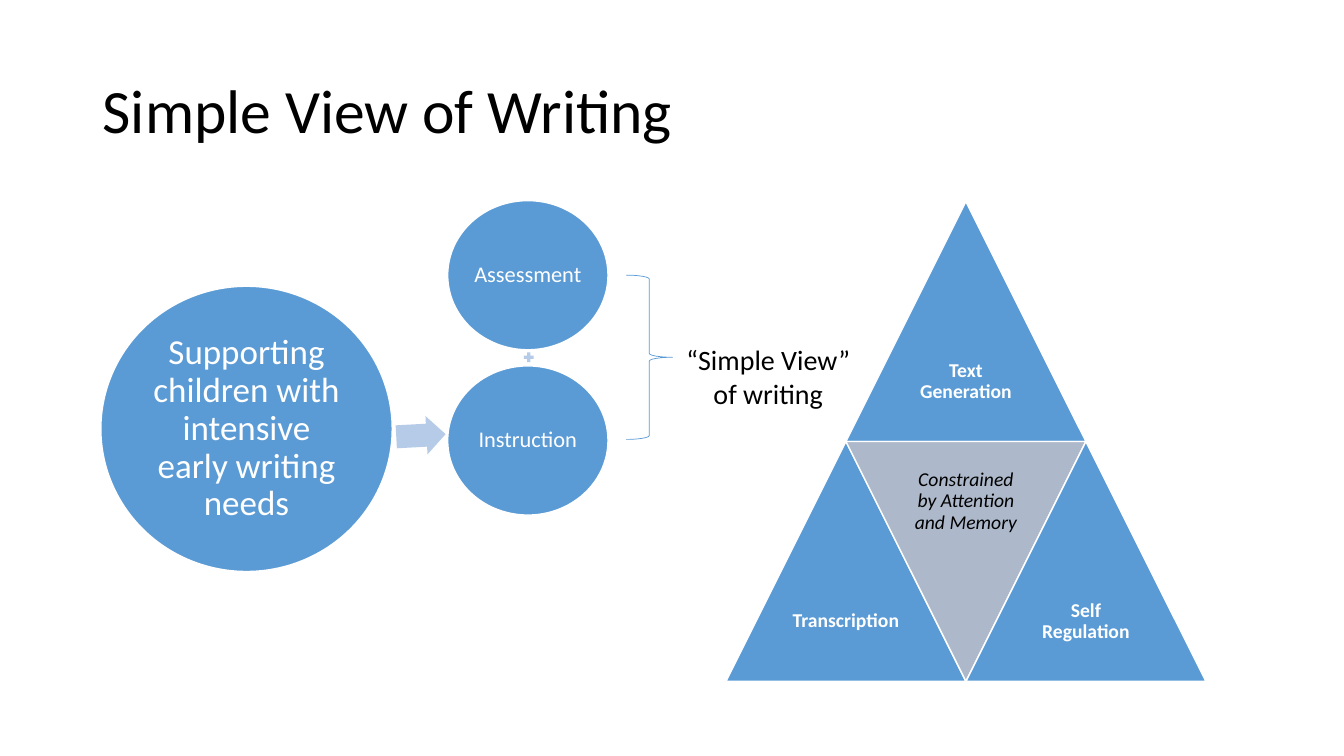
import pptx
import pptx.util
import pptx.dml.color
import pptx.enum.shapes
import pptx.enum.text

Inches = pptx.util.Inches
Pt = pptx.util.Pt
Shape = pptx.enum.shapes.MSO_SHAPE
Align = pptx.enum.text.PP_ALIGN

COLORS = {
    "blue": "5B9BD5",
    "pale_blue": "B5CBE7",
    "gray": "ADB9CA",
    "white": "FFFFFF",
    "black": "000000",
}


def rgb(name):
    return pptx.dml.color.RGBColor.from_string(COLORS[name])


class Canvas:
    font = "Calibri"

    def __init__(self, page):
        self.page = page

    def shape(self, kind, left, top, width, height, fill=None, line=None, line_width=1, rotation=0):
        shape = self.page.shapes.add_shape(
            kind, Inches(left), Inches(top), Inches(width), Inches(height))
        shape.shadow.inherit = False
        shape.rotation = rotation
        if fill:
            shape.fill.solid()
            shape.fill.fore_color.rgb = rgb(fill)
        else:
            shape.fill.background()
        if line:
            shape.line.color.rgb = rgb(line)
            shape.line.width = Pt(line_width)
        else:
            shape.line.fill.background()
        return shape

    def text(self, lines, left, top, width, height, size, color="white", align=Align.CENTER,
             spacing=0.9, inset=None, middle=True, bold=False, italic=False):
        box = self.page.shapes.add_textbox(
            Inches(left), Inches(top), Inches(width), Inches(height))
        frame = box.text_frame
        frame.word_wrap = True
        if middle:
            frame.vertical_anchor = pptx.enum.text.MSO_ANCHOR.MIDDLE
        if inset is not None:
            frame.margin_left = frame.margin_right = Inches(inset)
            frame.margin_top = frame.margin_bottom = Inches(inset)
        frame.text = lines
        for para in frame.paragraphs:
            para.alignment = align
            para.line_spacing = spacing
            for span in para.runs:
                span.font.name = self.font
                span.font.size = Pt(size)
                span.font.bold = bold
                span.font.italic = italic
                span.font.color.rgb = rgb(color)

    def circle(self, label, left, top, width, height, size, inset):
        """Ellipse with its label in the inscribed rectangle."""
        self.shape(Shape.OVAL, left, top, width, height, "blue", "white")
        share = 0.707
        margin = (1 - share) / 2
        self.text(label, left + width * margin, top + height * margin,
                  width * share, height * share, size, inset=inset)

    def triangle(self, label, left, top, side, inverted=False):
        """Triangle with its label in the half-size square at its wide end."""
        fill, color = ("gray", "black") if inverted else ("blue", "white")
        self.shape(Shape.ISOSCELES_TRIANGLE, left, top, side, side, fill, "white",
                   rotation=180 if inverted else 0)
        label_top = top if inverted else top + side / 2
        self.text(label, left + side / 4, label_top, side / 2, side / 2, 14, color,
                  inset=0.06, bold=not inverted, italic=inverted)


def main():
    deck = pptx.Presentation()
    deck.slide_width = Inches(13.33)
    deck.slide_height = Inches(7.5)
    canvas = Canvas(deck.slides.add_slide(deck.slide_layouts[6]))

    side, pyramid_left, pyramid_top = 2.38, 7.2, 2
    for label, column, row, inverted in (
        ("Text Generation", 0.5, 0, False),
        ("Transcription", 0, 1, False),
        ("Constrained by Attention and Memory", 0.5, 1, True),
        ("Self Regulation", 1, 1, False),
    ):
        canvas.triangle(label, pyramid_left + column * side, pyramid_top + row * side, side, inverted)

    canvas.text("Simple View of Writing", 0.92, 0.4, 11.5, 1.45, 44, "black", Align.LEFT)

    for row, label in enumerate(("Assessment", "Instruction")):
        canvas.circle(label, 4.44, 1.99 + row * 1.64, 1.59, 1.48, 16, 0.02)
    canvas.shape(Shape.MATH_PLUS, 5.18, 3.48, 0.13, 0.13, "pale_blue")
    arrow = canvas.shape(Shape.RIGHT_ARROW, 3.93, 4.13, 0.49, 0.38, "pale_blue", rotation=356.9)
    arrow.adjustments[0] = 0.6
    canvas.circle("Supporting children with intensive early writing needs",
                  1, 2.84, 2.89, 2.83, 25, 0.03)

    canvas.shape(Shape.RIGHT_BRACE, 6.21, 2.73, 0.46, 1.63, line="blue", line_width=0.5)
    canvas.text("“Simple View”\nof writing", 6.67, 3.35, 1.9, 0.77, 20, "black",
                spacing=1.0, middle=False)

    deck.save("out.pptx")


if __name__ == "__main__":
    main()
